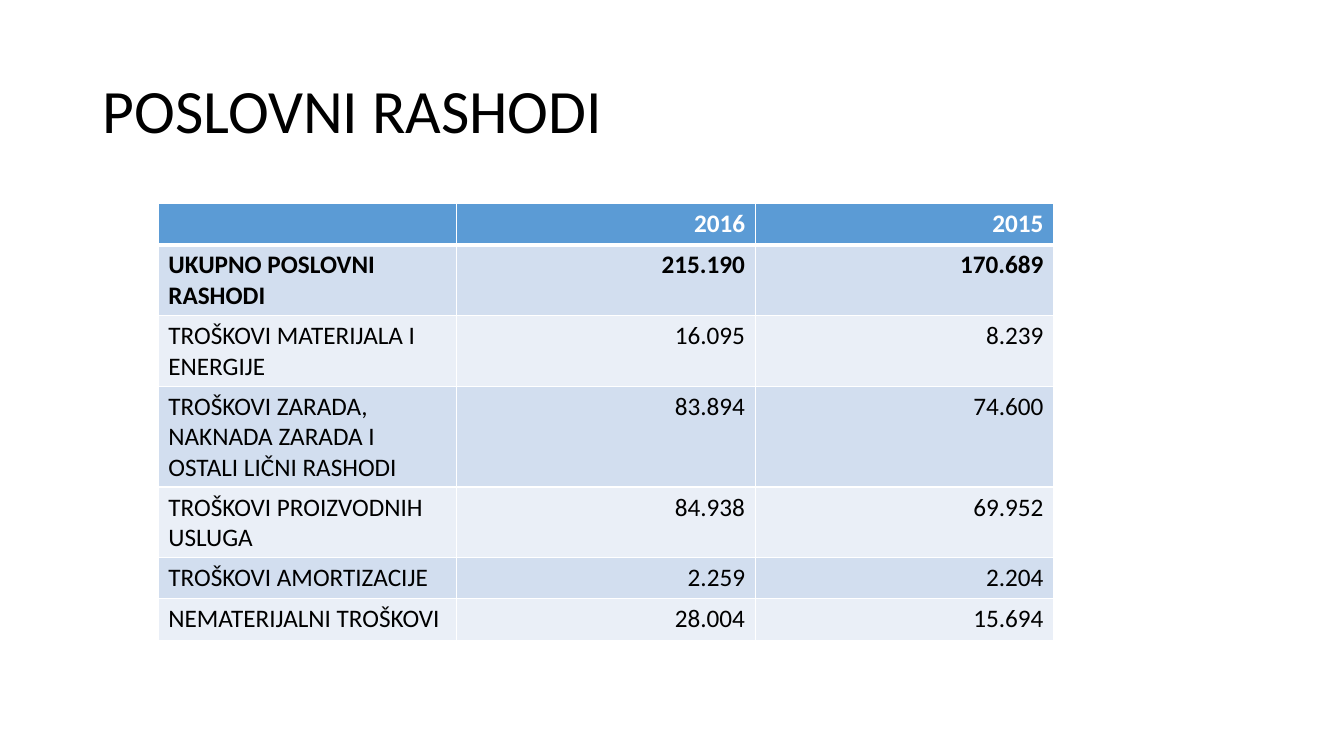
import pptx
import pptx.util
import pptx.dml.color
import pptx.enum.text
import pptx.oxml
import pptx.oxml.ns
from dataclasses import dataclass

Inches = pptx.util.Inches
Pt = pptx.util.Pt
RGB = pptx.dml.color.RGBColor.from_string
ALIGN = pptx.enum.text.PP_ALIGN
ANCHOR = pptx.enum.text.MSO_ANCHOR


@dataclass
class Theme:
    font: str = "Calibri"
    dark: str = "000000"
    light: str = "FFFFFF"
    head: str = "5B9BD5"
    bands: tuple = ("D2DEEF", "EAEFF7")
    title: int = 44
    body: int = 18
    thin: int = 1
    thick: int = 3


def write(frame, text, *, font, size, color, bold=False, align=ALIGN.LEFT, space=1.0):
    para = frame.paragraphs[0]
    para.alignment = align
    para.line_spacing = space
    para.font.size = Pt(size)
    if text:
        run = para.add_run()
        run.text = text
        run.font.name = font
        run.font.size = Pt(size)
        run.font.bold = bold
        run.font.color.rgb = RGB(color)


class Page:
    def __init__(self, slide, theme):
        self.slide = slide
        self.theme = theme

    def title(self, text, left, top, width, height):
        box = self.slide.shapes.add_textbox(
            Inches(left), Inches(top), Inches(width), Inches(height))
        frame = box.text_frame
        frame.word_wrap = True
        frame.vertical_anchor = ANCHOR.MIDDLE
        write(frame, text, font=self.theme.font, size=self.theme.title,
              color=self.theme.dark, space=0.9)

    def edge(self, cell, side, width):
        props = cell._tc.get_or_add_tcPr()
        props.append(pptx.oxml.parse_xml(
            f'<a:ln{side} {pptx.oxml.ns.nsdecls("a")} w="{Pt(width)}">'
            f'<a:solidFill><a:srgbClr val="{self.theme.light}"/></a:solidFill>'
            f'</a:ln{side}>'))

    def table(self, rows, left, top, width, height):
        theme = self.theme
        count = len(rows[0])
        grid = self.slide.shapes.add_table(
            len(rows), count, Inches(left), Inches(top),
            Inches(width * count), Inches(height * len(rows))).table
        for r, row in enumerate(rows):
            head = r == 0
            fill = theme.head if head else theme.bands[(r - 1) % 2]
            heavy = {0: "B", 1: "T"}.get(r)
            for c, text in enumerate(row):
                cell = grid.cell(r, c)
                for side in "LRTB":
                    self.edge(cell, side, theme.thick if side == heavy else theme.thin)
                cell.fill.solid()
                cell.fill.fore_color.rgb = RGB(fill)
                write(cell.text_frame, text, font=theme.font, size=theme.body,
                      color=theme.light if head else theme.dark, bold=r < 2,
                      align=ALIGN.RIGHT if c else ALIGN.LEFT)


COSTS = [
    ("", "2016", "2015"),
    ("UKUPNO POSLOVNI RASHODI", "215.190", "170.689"),
    ("TROŠKOVI MATERIJALA I ENERGIJE", "16.095", "8.239"),
    ("TROŠKOVI ZARADA, NAKNADA ZARADA I OSTALI LIČNI RASHODI", "83.894", "74.600"),
    ("TROŠKOVI PROIZVODNIH USLUGA", "84.938", "69.952"),
    ("TROŠKOVI AMORTIZACIJE", "2.259", "2.204"),
    ("NEMATERIJALNI TROŠKOVI", "28.004", "15.694"),
]


def main():
    deck = pptx.Presentation()
    deck.slide_width = Inches(13.33)
    deck.slide_height = Inches(7.5)
    page = Page(deck.slides.add_slide(deck.slide_layouts[6]), Theme())
    page.title("POSLOVNI RASHODI", 0.92, 0.4, 11.5, 1.45)
    page.table(COSTS, 1.57, 2.02, 2.96, 0.41)
    deck.save("out.pptx")


if __name__ == "__main__":
    main()
